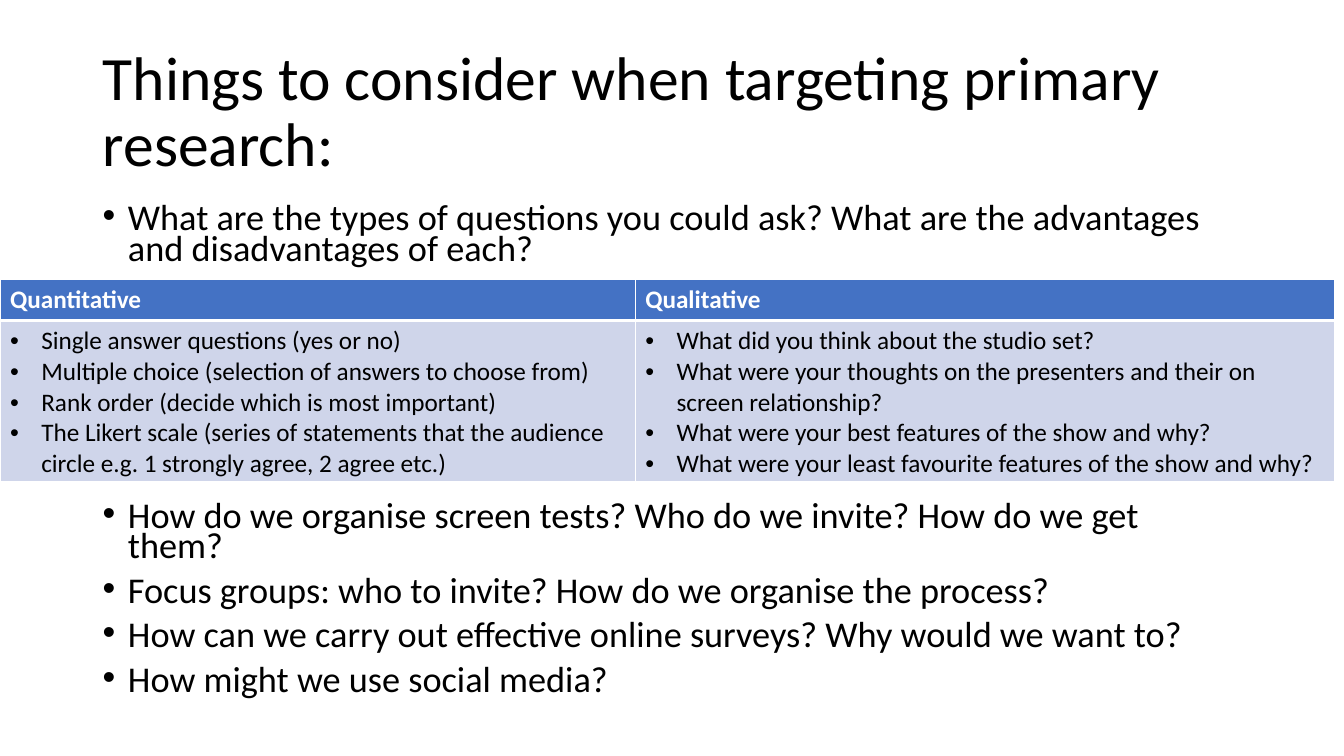
import pptx
import pptx.dml.color
import pptx.enum.text
import pptx.oxml
import pptx.oxml.ns
import pptx.util

# Content
TITLE = "Things to consider when targeting primary research:"
OPENING_QUESTIONS = [
    "What are the types of questions you could ask? What are the advantages and disadvantages of each?",
]
CLOSING_QUESTIONS = [
    "How do we organise screen tests? Who do we invite? How do we get them?",
    "Focus groups: who to invite? How do we organise the process?",
    "How can we carry out effective online surveys? Why would we want to?",
    "How might we use social media?",
]
QUESTION_TYPES = {
    "Quantitative": [
        "Single answer questions (yes or no)",
        "Multiple choice (selection of answers to choose from)",
        "Rank order (decide which is most important)",
        "The Likert scale (series of statements that the audience circle e.g. 1 strongly agree, 2 agree etc.)",
    ],
    "Qualitative": [
        "What did you think about the studio set?",
        "What were your thoughts on the presenters and their on screen relationship?",
        "What were your best features of the show and why?",
        "What were your least favourite features of the show and why?",
    ],
}

# Layout in inches
SLIDE_WIDTH, SLIDE_HEIGHT = 13.33, 7.5
MARGIN = 0.92
TEXT_WIDTH = SLIDE_WIDTH - 2 * MARGIN
TABLE_TOP = 2.77
COLUMN_WIDTHS = [6.3, 6.94]
ROW_HEIGHTS = [0.41, 1.6]

FONT = "Calibri"
BLACK, WHITE = "000000", "FFFFFF"
HEADER_FILL, BODY_FILL = "4472C4", "CFD5EA"


def color(value):
    return pptx.dml.color.RGBColor.from_string(value)


def add_bullet(paragraph, indent):
    properties = paragraph._p.get_or_add_pPr()
    properties.set("marL", str(pptx.util.Inches(indent)))
    properties.set("indent", str(-pptx.util.Inches(indent)))
    namespace = pptx.oxml.ns.nsdecls("a")
    properties.append(pptx.oxml.parse_xml(f'<a:buFont {namespace} typeface="Arial"/>'))
    properties.append(pptx.oxml.parse_xml(f'<a:buChar {namespace} char="•"/>'))


def write_lines(text_frame, lines, size, font_color=BLACK, bold=False,
                spacing=None, before=None, indent=None):
    text_frame.text = "\n".join(lines)
    for paragraph in text_frame.paragraphs:
        if spacing:
            paragraph.line_spacing = spacing
        if before:
            paragraph.space_before = pptx.util.Pt(before)
        if indent:
            add_bullet(paragraph, indent)
        for run in paragraph.runs:
            run.font.name = FONT
            run.font.size = pptx.util.Pt(size)
            run.font.bold = bold
            run.font.color.rgb = color(font_color)


def add_text(slide, top, height, lines, size, **style):
    box = slide.shapes.add_textbox(*map(pptx.util.Inches, (MARGIN, top, TEXT_WIDTH, height)))
    box.text_frame.word_wrap = True
    write_lines(box.text_frame, lines, size, **style)
    return box


def set_borders(cell, widths):
    properties = cell._tc.get_or_add_tcPr()
    for position, (side, width) in enumerate(widths.items()):
        properties.insert(position, pptx.oxml.parse_xml(
            f'<a:ln{side} {pptx.oxml.ns.nsdecls("a")} w="{pptx.util.Pt(width)}">'
            f'<a:solidFill><a:srgbClr val="{WHITE}"/></a:solidFill></a:ln{side}>'))


def fill_cell(cell, lines, fill, top_line, bottom_line, **style):
    write_lines(cell.text_frame, lines, 18, **style)
    cell.fill.solid()
    cell.fill.fore_color.rgb = color(fill)
    set_borders(cell, {"L": 1, "R": 1, "T": top_line, "B": bottom_line})


def add_question_table(slide):
    frame = slide.shapes.add_table(
        len(ROW_HEIGHTS), len(COLUMN_WIDTHS), 0, pptx.util.Inches(TABLE_TOP),
        pptx.util.Inches(sum(COLUMN_WIDTHS)), pptx.util.Inches(sum(ROW_HEIGHTS)))
    table = frame.table
    for row, height in zip(table.rows, ROW_HEIGHTS):
        row.height = pptx.util.Inches(height)
    for index, (heading, examples) in enumerate(QUESTION_TYPES.items()):
        table.columns[index].width = pptx.util.Inches(COLUMN_WIDTHS[index])
        fill_cell(table.cell(0, index), [heading], HEADER_FILL, 1, 3,
                  font_color=WHITE, bold=True)
        fill_cell(table.cell(1, index), examples, BODY_FILL, 3, 1, indent=0.31)


def main():
    presentation = pptx.Presentation()
    presentation.slide_width = pptx.util.Inches(SLIDE_WIDTH)
    presentation.slide_height = pptx.util.Inches(SLIDE_HEIGHT)
    slide = presentation.slides.add_slide(presentation.slide_layouts[6])

    # Title
    title = add_text(slide, 0.4, 1.45, [TITLE], 44, spacing=0.9)
    title.text_frame.vertical_anchor = pptx.enum.text.MSO_ANCHOR.MIDDLE

    # Questions above and below the table
    question_style = {"spacing": 0.7, "before": 10, "indent": 0.25}
    add_text(slide, 2, 0.75, OPENING_QUESTIONS, 25.9, **question_style)
    add_text(slide, 4.95, 2.29, CLOSING_QUESTIONS, 25.9, **question_style)

    # Table of question types
    add_question_table(slide)

    presentation.save("out.pptx")


if __name__ == "__main__":
    main()
